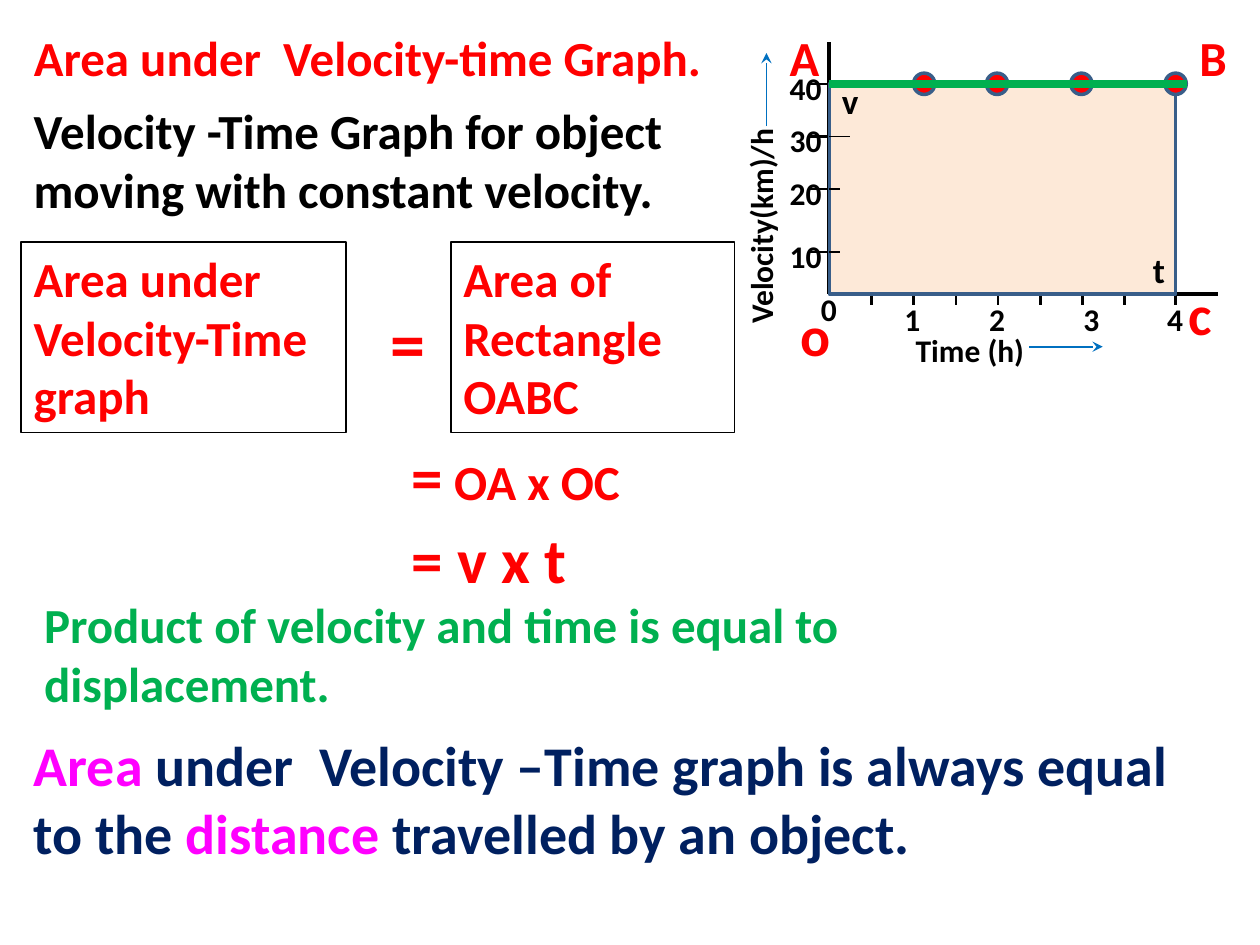
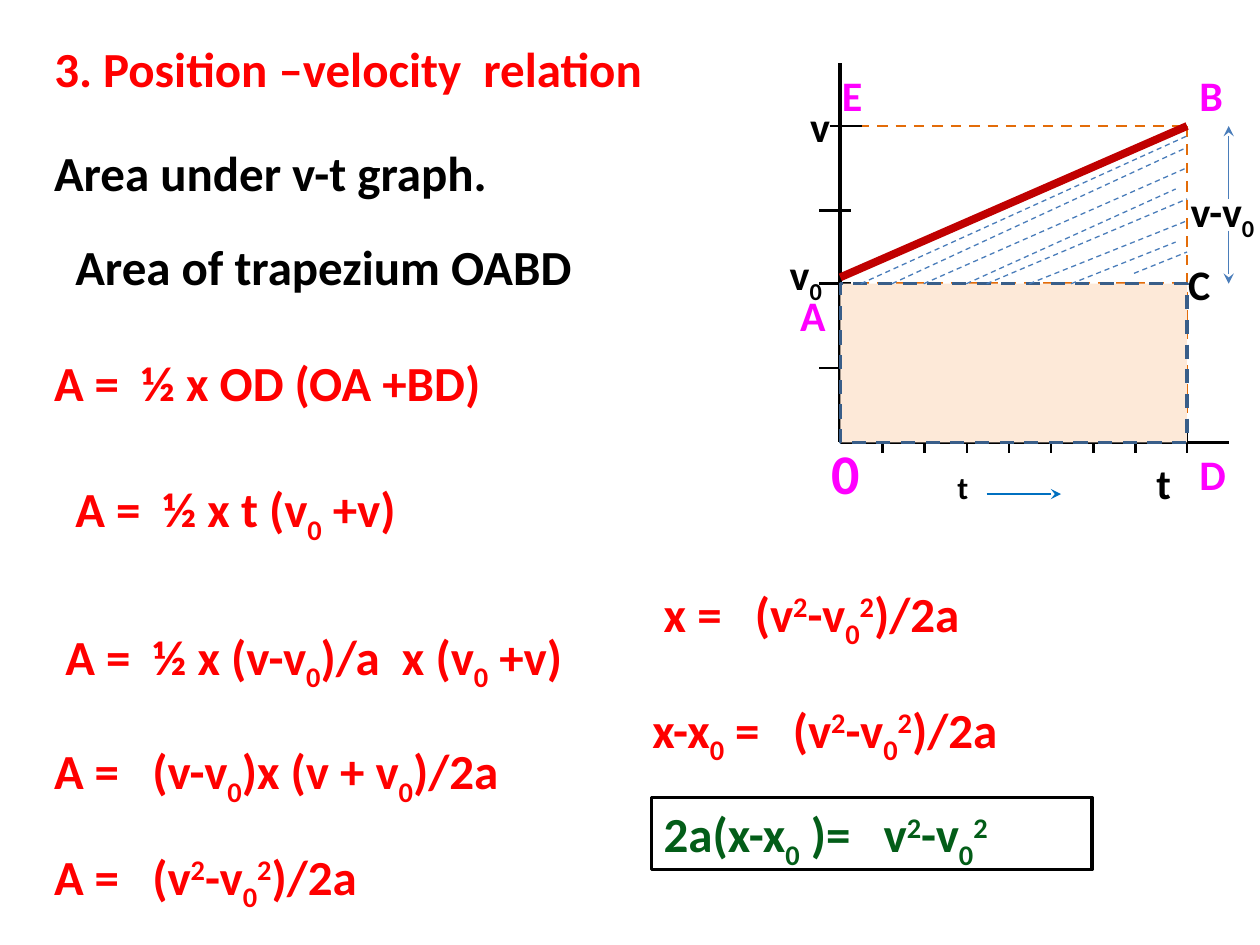
"""Builds two slides on the area under velocity-time graphs."""
from lxml import etree
from pptx import Presentation
from pptx.dml.color import RGBColor
from pptx.enum.dml import MSO_LINE
from pptx.enum.shapes import MSO_CONNECTOR as CONNECTOR, MSO_SHAPE as SHAPE
from pptx.enum.text import MSO_ANCHOR as ANCHOR, MSO_AUTO_SIZE as AUTO_SIZE, PP_ALIGN as ALIGN
from pptx.oxml.ns import qn
from pptx.util import Cm, Pt

FONT = "Calibri"
BLACK = RGBColor(0x00, 0x00, 0x00)
WHITE = RGBColor(0xFF, 0xFF, 0xFF)
RED = RGBColor(0xFF, 0x00, 0x00)
DARK_RED = RGBColor(0xC0, 0x00, 0x00)
GREEN = RGBColor(0x00, 0xB0, 0x50)
DARK_GREEN = RGBColor(0x03, 0x5D, 0x18)
NAVY = RGBColor(0x00, 0x20, 0x60)
MAGENTA = RGBColor(0xFF, 0x00, 0xFF)
ORANGE = RGBColor(0xE3, 0x6C, 0x09)
ARROW_BLUE = RGBColor(0x00, 0x70, 0xC0)
HATCH_BLUE = RGBColor(0x4A, 0x7D, 0xBA)
EDGE_BLUE = RGBColor(0x39, 0x5E, 0x89)
PEACH = RGBColor(0xFD, 0xE9, 0xD8)

BASELINES = {"_": "-25000", "^": "30000"}
V_SQUARED_CHANGE = "v|^2|-v|_0|^2|"
LINE_HEIGHT = 1.45
TWO_LINES = 2.64
LABEL_WIDTH = 1.1
TICK_SPACING = 0.85
TICK_REACH = 0.21
TICK_LENGTH = 0.64
DOT = 0.43


def write(slide, text, left, top, width, height=LINE_HEIGHT, size=28, color=RED,
          accent_size=None, accent_color=None, border=None, rotation=0, title=False):
    shape = slide.shapes.title if title else slide.shapes.add_textbox(0, 0, 0, 0)
    shape.left, shape.top, shape.width, shape.height = Cm(left), Cm(top), Cm(width), Cm(height)
    shape.rotation = rotation
    if border:
        shape.fill.solid()
        shape.fill.fore_color.rgb = WHITE
        shape.line.color.rgb = BLACK
        shape.line.width = Pt(border)
    frame = shape.text_frame
    frame.word_wrap = True
    frame.auto_size = AUTO_SIZE.NONE
    frame.vertical_anchor = ANCHOR.TOP
    for index, line in enumerate(text.split("\n")):
        paragraph = frame.add_paragraph() if index else frame.paragraphs[0]
        paragraph.alignment = ALIGN.LEFT
        for piece in filter(None, line.split("|")):
            mark = piece[0] if piece[0] in "_^*" else ""
            accented = mark == "*"
            run = paragraph.add_run()
            run.text = piece[len(mark):]
            run.font.name = FONT
            run.font.bold = True
            run.font.size = Pt(accent_size if accented and accent_size else size)
            run.font.color.rgb = accent_color if accented and accent_color else color
            if mark in BASELINES:
                run._r.get_or_add_rPr().set("baseline", BASELINES[mark])


def draw_line(slide, x1, y1, x2, y2, color=BLACK, width=1.5, dash=False, arrow=False):
    connector = slide.shapes.add_connector(CONNECTOR.STRAIGHT, Cm(x1), Cm(y1), Cm(x2), Cm(y2))
    connector.line.color.rgb = color
    connector.line.width = Pt(width)
    if dash:
        connector.line.dash_style = MSO_LINE.DASH
    properties = connector._element.spPr
    if arrow:
        etree.SubElement(properties.find(qn("a:ln")), qn("a:tailEnd"), type="stealth")
    etree.SubElement(properties, qn("a:effectLst"))


presentation = Presentation()
presentation.slide_width = Cm(25.4)
presentation.slide_height = Cm(19.05)
title_only = presentation.slide_layouts[5]
area_slide = presentation.slides.add_slide(title_only)
relation_slide = presentation.slides.add_slide(title_only)

area_x, area_y, area_end = 16.72, 5.93, 23.7
velocity_y = {10: 5.08, 20: 3.81, 30: 2.75, 40: 1.69}
constant_y = velocity_y[40]
hour_x = [area_x, 18.4, 20.11, 22.01, area_end]

relation_x, relation_y, relation_end = 16.94, 8.92, 23.93
final_y, middle_y, initial_y, low_y = 2.54, 4.24, 5.72, 7.42

write(area_slide, "Area under  Velocity-time Graph.", 0.43, 0.43, 14.61, title=True)
write(relation_slide, "3. Position –velocity  relation", 0.84, 0.64, 12.7, title=True)

for x1, y1, x2, y2 in ((relation_x, final_y, relation_end, final_y),
                       (relation_x, initial_y, relation_end, initial_y),
                       (relation_end, final_y, relation_end, relation_y)):
    draw_line(relation_slide, x1, y1, x2, y2, color=ORANGE, dash=True)

for slide, x, y, end, top, tick_rows in (
        (area_slide, area_x, area_y, area_end, 0.85, velocity_y.values()),
        (relation_slide, relation_x, relation_y, relation_end, 1.27,
         (final_y, middle_y, initial_y, low_y))):
    draw_line(slide, x, top, x, y, width=2.25)
    draw_line(slide, x, y, end + TICK_SPACING, y, width=2.25)
    for tick_x in [x + TICK_SPACING * count for count in range(1, 8)] + [end]:
        draw_line(slide, tick_x, y - TICK_REACH, tick_x, y + TICK_REACH)
    for tick_y in tick_rows:
        highest = tick_y in (constant_y, final_y)
        tick_left = x - TICK_REACH * (1 if slide is relation_slide and highest else 2)
        tick_left = x - 2 * TICK_REACH if slide is area_slide and highest else tick_left
        draw_line(slide, tick_left, tick_y, tick_left + TICK_LENGTH, tick_y)

areas = [(area_slide, SHAPE.RECTANGLE, area_x, constant_y, area_end - area_x,
          area_y - constant_y, PEACH),
         (relation_slide, SHAPE.RECTANGLE, relation_x, initial_y, relation_end - relation_x,
          relation_y - initial_y, PEACH)]
dots = [(area_slide, SHAPE.OVAL, center - DOT / 2, constant_y - DOT / 2, DOT, DOT, RED)
        for center in (18.63, 20.1, 21.8, area_end)]
for slide, kind, left, top, width, height, fill in areas + dots:
    shape = slide.shapes.add_shape(kind, Cm(left), Cm(top), Cm(width), Cm(height))
    shape.shadow.inherit = False
    shape.fill.solid()
    shape.fill.fore_color.rgb = fill
    shape.line.color.rgb = EDGE_BLUE
    shape.line.width = Pt(2)
    if slide is relation_slide:
        shape.line.dash_style = MSO_LINE.DASH

for velocity, y in velocity_y.items():
    write(area_slide, str(velocity), area_x - 1.05, y - 0.43, 1.2, size=18, color=BLACK)
    if y != constant_y:
        inner_end = area_x + TICK_REACH * (2 if velocity == 30 else 1)
        draw_line(area_slide, area_x, y, inner_end, y, width=0.75)
for hour, x in enumerate(hour_x):
    label_y = area_y if hour else area_y - TICK_REACH
    write(area_slide, str(hour), x - 0.42, label_y, 0.86, size=18, color=BLACK)

draw_line(area_slide, area_x, constant_y, area_end + 0.23, constant_y, color=GREEN, width=4.5)
write(area_slide, "Time (h)", 18.21, 6.55, 3.18, 1.02, size=18, color=BLACK)
draw_line(area_slide, 20.75, 6.99, 22.23, 6.99, color=ARROW_BLUE, width=1, arrow=True)
write(area_slide, "Velocity(km)/h", 13.11, 4.04, 4.45, 1.02, size=18, color=BLACK, rotation=270)
draw_line(area_slide, 15.45, 2.54, 15.45, 1.07, color=ARROW_BLUE, width=1, arrow=True)

for label, x, y, size, color in (
        ("o", area_x - 0.84, area_y, 32, RED),
        ("A", area_x - 1.05, constant_y - 1.26, 28, RED),
        ("B", area_end + 0.23, constant_y - 1.26, 28, RED),
        ("c", area_end, area_y - 0.42, 32, RED),
        ("v", area_x, constant_y - 0.22, 20, BLACK),
        ("t", area_end - 0.71, area_y - 1.05, 20, BLACK)):
    write(area_slide, label, x, y, LABEL_WIDTH, size=size, color=color)

write(area_slide, "Velocity -Time Graph for object moving with constant velocity.",
      0.43, 1.91, 13.97, TWO_LINES, color=BLACK)
write(area_slide, "Area under\nVelocity-Time graph", 0.43, 4.88, 6.55, 3.84, border=1)
write(area_slide, "=", 7.62, 5.92, LABEL_WIDTH, 1.96, size=40)
write(area_slide, "Area of Rectangle OABC", 9.09, 4.88, 5.72, 3.84, border=1)
write(area_slide, "*=| OA x OC", 8.05, 8.69, 5.28, 1.8, accent_size=36)
write(area_slide, "= v x t", 8.05, 10.36, 3.8, 1.8, size=36)
write(area_slide, "Product of velocity and time is equal to displacement.",
      0.64, 11.86, 18.21, TWO_LINES, color=GREEN)
write(area_slide, "*Area| under  Velocity –Time graph is always equal to the |*distance"
      "| travelled by an object.", 0.43, 14.61, 24.33, 3, size=32, color=NAVY,
      accent_color=MAGENTA)

draw_line(relation_slide, relation_x, initial_y - 0.13, relation_end, final_y,
          color=DARK_RED, width=4.5)
for start_x, gap_to_edge, end_y in (
        (17.35, 0, 2.74), (17.98, 0, 2.97), (18.62, 0, 3.38), (19.48, 0.23, 3.81),
        (19.89, 0, 4.01), (20.75, 0, 4.45), (21.59, 0.23, 4.88)):
    draw_line(relation_slide, start_x, initial_y, relation_end - gap_to_edge, end_y,
              color=HATCH_BLUE, width=0.75, dash=True)
draw_line(relation_slide, 22.86, initial_y - TICK_REACH, relation_end, 5.08,
          color=HATCH_BLUE, width=0.75, dash=True)

change_x = relation_end + 0.84
for start_y, end_y in ((4.65, initial_y), (4.01, final_y)):
    draw_line(relation_slide, change_x, start_y, change_x, end_y,
              color=HATCH_BLUE, width=0.75, arrow=True)
draw_line(relation_slide, 19.89, 9.96, 21.39, 9.96, color=ARROW_BLUE, width=1, arrow=True)

for label, x, y in (("E", relation_x - 0.22, final_y - 1.27),
                    ("B", relation_end, final_y - 1.27),
                    ("D", relation_end, relation_y),
                    ("A", relation_x - 1.06, initial_y)):
    write(relation_slide, label, x, y, LABEL_WIDTH, size=24, color=MAGENTA)
write(relation_slide, "0", relation_x - 0.43, relation_y - 0.21, LABEL_WIDTH, size=32,
      color=MAGENTA)
for label, x, y, width in (("v", relation_x - 0.86, final_y - 0.63, LABEL_WIDTH),
                           ("v|_0", relation_x - 1.27, initial_y - 0.84, 1.25),
                           ("C", relation_end - 0.23, initial_y - 0.64, LABEL_WIDTH),
                           ("v-v|_0", relation_end - 0.18, 3.61, 1.95),
                           ("t", relation_end - 0.87, relation_y + 0.17, LABEL_WIDTH)):
    write(relation_slide, label, x, y, width, size=24, color=BLACK)
write(relation_slide, "t", 19.05, 9.32, 1.27, 1.02, size=18, color=BLACK)

for text, x, y in (("Area under v-t graph.", 0.84, 2.74),
                   ("Area of trapezium OABD", 1.27, 4.65)):
    write(relation_slide, text, x, y, 11, color=BLACK)
for equation, x, y in (("A =  ½ x OD (OA +BD)", 0.84, 6.99),
                       ("A =  ½ x t (v|_0| +v)", 1.27, 9.53),
                       ("A =  ½ x (v-v|_0|)/a  x (v|_0| +v)", 1.07, 12.5),
                       ("A =   (v-v|_0|)x (v + v|_0|)/2a", 0.84, 14.81),
                       (f"A =   ({V_SQUARED_CHANGE})/2a", 0.84, 16.94),
                       (f"x =   ({V_SQUARED_CHANGE})/2a", 13.13, 11.63),
                       (f"x-x|_0| =   ({V_SQUARED_CHANGE})/2a", 12.9, 13.97)):
    write(relation_slide, equation, x, y, 11.43)
write(relation_slide, f"2a(x-x|_0| )=   {V_SQUARED_CHANGE}", 13.13, 16.08, 8.89,
      color=DARK_GREEN, border=2)

presentation.save("out.pptx")
